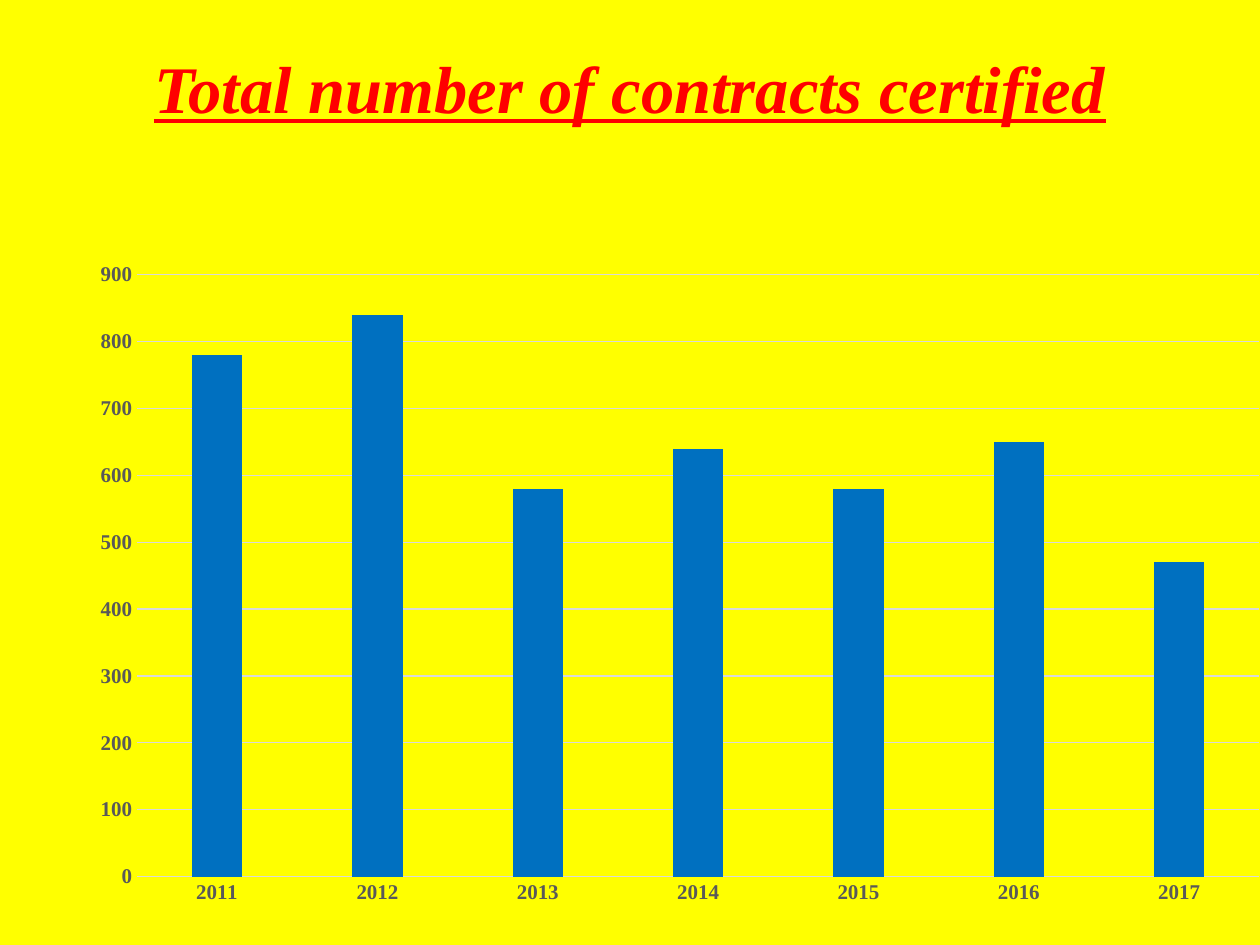
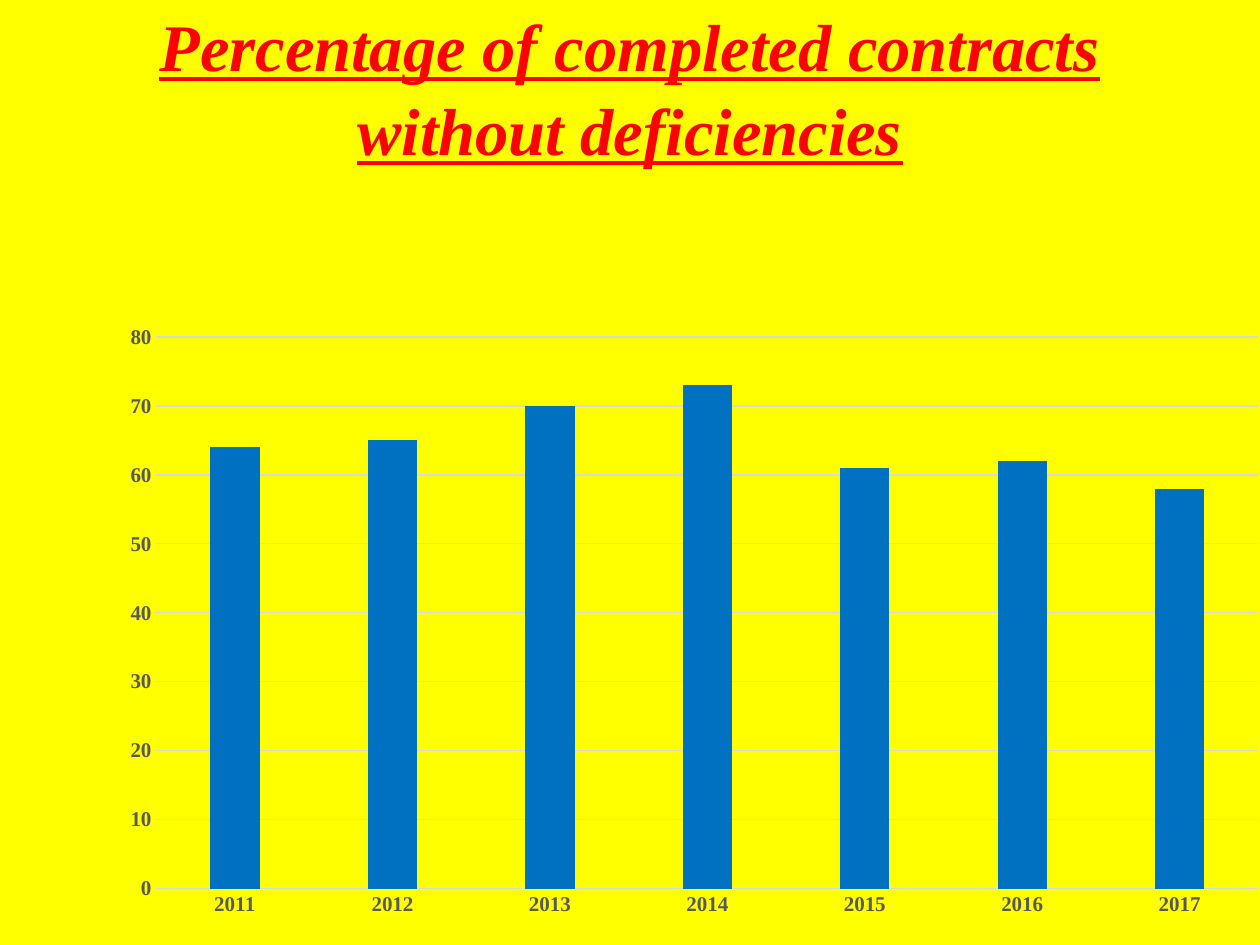
import pptx
import pptx.chart.data
import pptx.dml.color
import pptx.enum.chart
import pptx.enum.text
import pptx.oxml
import pptx.oxml.ns
import pptx.util

YELLOW = pptx.dml.color.RGBColor(0xFF, 0xFF, 0x00)
RED = pptx.dml.color.RGBColor(0xFF, 0x00, 0x00)
BLUE = pptx.dml.color.RGBColor(0x00, 0x70, 0xC0)
LABEL_GREY = pptx.dml.color.RGBColor(0x59, 0x59, 0x59)
LINE_GREY = pptx.dml.color.RGBColor(0xD9, 0xD9, 0xD9)
FONT = "Times New Roman"
YEARS = [str(year) for year in range(2011, 2018)]
BLANK_LAYOUT = 6
WIDTH = pptx.util.Inches(10)
HEIGHT = pptx.util.Inches(7.5)
TITLE_SHARE = 0.18


def add_slide(presentation):
    slide = presentation.slides.add_slide(presentation.slide_layouts[BLANK_LAYOUT])
    slide.background.fill.solid()
    slide.background.fill.fore_color.rgb = YELLOW
    return slide


def set_font(font, size, color):
    font.name = FONT
    font.size = pptx.util.Pt(size)
    font.bold = True
    font.color.rgb = color


def add_title(slide, text):
    box = slide.shapes.add_textbox(0, 0, WIDTH, round(HEIGHT * TITLE_SHARE))
    frame = box.text_frame
    frame.word_wrap = True
    frame.vertical_anchor = pptx.enum.text.MSO_ANCHOR.MIDDLE
    paragraph = frame.paragraphs[0]
    paragraph.text = text
    paragraph.alignment = pptx.enum.text.PP_ALIGN.CENTER
    paragraph.line_spacing = 1.05
    set_font(paragraph.font, 38, RED)
    paragraph.font.italic = True
    paragraph.font.underline = True


def chart_element(tag, content):
    namespaces = pptx.oxml.ns.nsdecls("c", "a")
    return pptx.oxml.parse_xml(f"<c:{tag} {namespaces}>{content}</c:{tag}>")


def place_plot(chart, plot_box):
    chart_part = chart._chartSpace.find(pptx.oxml.ns.qn("c:chart"))
    plot_area = chart_part.find(pptx.oxml.ns.qn("c:plotArea"))
    for layout in plot_area.findall(pptx.oxml.ns.qn("c:layout")):
        plot_area.remove(layout)
    settings = [("layoutTarget", "inner"), ("xMode", "edge"), ("yMode", "edge")]
    settings += zip("xywh", plot_box)
    content = "".join(f'<c:{name} val="{value}"/>' for name, value in settings)
    layout = chart_element("layout", f"<c:manualLayout>{content}</c:manualLayout>")
    plot_area.insert(0, layout)
    no_fill = "<a:noFill/><a:ln><a:noFill/></a:ln>"
    plot_area.append(chart_element("spPr", no_fill))
    chart_part.addnext(chart_element("spPr", no_fill))


def style_axis(axis):
    axis.major_tick_mark = pptx.enum.chart.XL_TICK_MARK.NONE
    axis.minor_tick_mark = pptx.enum.chart.XL_TICK_MARK.NONE
    set_font(axis.tick_labels.font, 12, LABEL_GREY)


def style_line(line):
    line.color.rgb = LINE_GREY
    line.width = pptx.util.Pt(0.75)


def add_column_chart(slide, values, maximum, step, chart_box, plot_box):
    data = pptx.chart.data.CategoryChartData()
    data.categories = YEARS
    data.add_series("Series 1", values)
    chart = slide.shapes.add_chart(
        pptx.enum.chart.XL_CHART_TYPE.COLUMN_CLUSTERED,
        *(pptx.util.Inches(length) for length in chart_box), data).chart
    chart.has_legend = False
    chart.has_title = False
    set_font(chart.font, 12, LABEL_GREY)

    style_axis(chart.category_axis)
    style_line(chart.category_axis.format.line)
    value_axis = chart.value_axis
    style_axis(value_axis)
    value_axis.format.line.fill.background()
    value_axis.minimum_scale = 0
    value_axis.maximum_scale = maximum
    value_axis.major_unit = step
    style_line(value_axis.major_gridlines.format.line)

    plot = chart.plots[0]
    plot.gap_width = 219
    plot.overlap = -27
    plot.vary_by_categories = False
    columns = plot.series[0]
    columns.format.fill.solid()
    columns.format.fill.fore_color.rgb = BLUE
    place_plot(chart, plot_box)


def main():
    presentation = pptx.Presentation()
    presentation.slide_width = WIDTH
    presentation.slide_height = HEIGHT

    certified = add_slide(presentation)
    add_title(certified, "Total number of contracts certified")
    add_column_chart(certified, [780, 840, 580, 640, 580, 650, 470], 900, 100,
                     (0.12, 0.1, 13.08, 7.25), (0.074, 0.287, 0.681, 0.659))

    completed = add_slide(presentation)
    add_title(completed, "Percentage of completed contracts\vwithout deficiencies")
    add_column_chart(completed, [64, 65, 70, 73, 61, 62, 58], 80, 10,
                     (0.21, 0.17, 12.9, 7.2), (0.08, 0.348, 0.678, 0.608))

    presentation.save("out.pptx")


if __name__ == "__main__":
    main()
